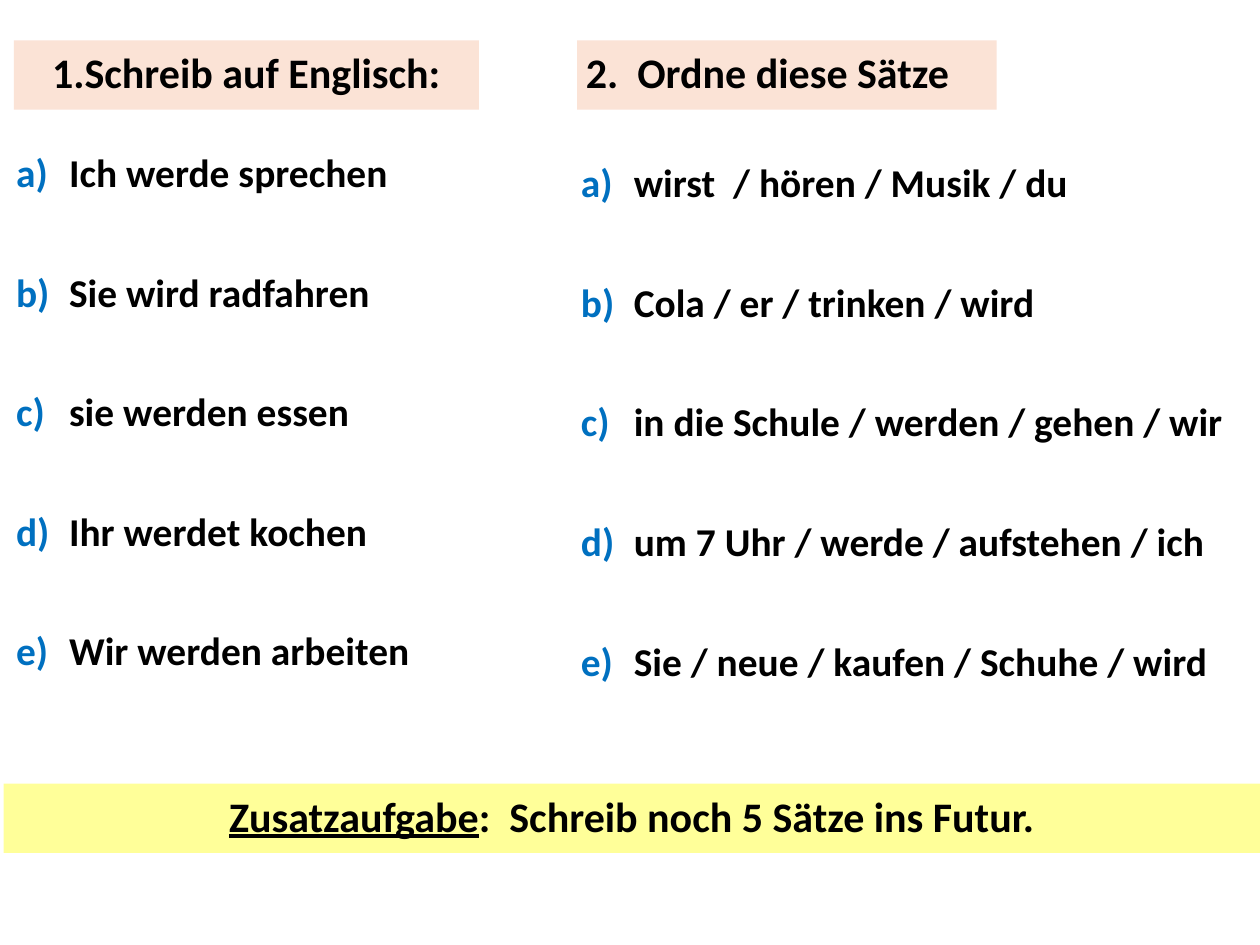
from pptx import Presentation
from pptx.dml.color import RGBColor
from pptx.enum.shapes import MSO_SHAPE
from pptx.enum.text import MSO_ANCHOR, PP_ALIGN
from pptx.oxml.ns import qn
from pptx.util import Inches, Pt
from lxml.etree import SubElement

COLORS = {"text": "000000", "number": "0070C0", "heading": "FBE3D6", "bonus": "FFFF99"}


class Worksheet:
    font = "Calibri"
    banner_size = 24
    item_size = 22.5
    line_spacing = 0.9
    item_gap = 44
    indent = 0.42

    def __init__(self, slide):
        self.slide = slide

    def set_frame(self, shape, side, edge, anchor):
        frame = shape.text_frame
        frame.word_wrap = True
        frame.vertical_anchor = anchor
        frame.margin_left = frame.margin_right = Inches(side)
        frame.margin_top = frame.margin_bottom = Inches(edge)
        return frame

    def add_span(self, para, text, size, underline=False):
        span = para.add_run()
        span.text = text
        span.font.name = self.font
        span.font.size = Pt(size)
        span.font.bold = True
        span.font.underline = underline
        span.font.color.rgb = RGBColor.from_string(COLORS["text"])

    def add_banner(self, left, top, width, fill, spans, align=PP_ALIGN.CENTER):
        banner = self.slide.shapes.add_shape(
            MSO_SHAPE.RECTANGLE, Inches(left), Inches(top), Inches(width), Inches(0.55))
        banner.shadow.inherit = False
        banner.fill.solid()
        banner.fill.fore_color.rgb = RGBColor.from_string(COLORS[fill])
        banner.line.fill.background()
        para = self.set_frame(banner, 0.07, 0.04, MSO_ANCHOR.MIDDLE).paragraphs[0]
        para.alignment = align
        para.line_spacing = self.line_spacing
        for text, underline in spans:
            self.add_span(para, text, self.banner_size, underline)

    def number_para(self, para):
        props = para._p.get_or_add_pPr()
        props.set("marL", str(Inches(self.indent)))
        props.set("indent", str(-Inches(self.indent)))
        color = SubElement(props, qn("a:buClr"))
        SubElement(color, qn("a:srgbClr")).set("val", COLORS["number"])
        SubElement(props, qn("a:buFont")).set("typeface", "+mj-lt")
        SubElement(props, qn("a:buAutoNum")).set("type", "alphaLcParenR")

    def add_list(self, left, top, width, side, edge, items):
        box = self.slide.shapes.add_textbox(
            Inches(left), Inches(top), Inches(width), Inches(4.75))
        frame = self.set_frame(box, side, edge, MSO_ANCHOR.TOP)
        for index, item in enumerate(items):
            para = frame.add_paragraph() if index else frame.paragraphs[0]
            para.line_spacing = self.line_spacing
            para.space_before = Pt(self.item_gap if index else 0)
            self.number_para(para)
            self.add_span(para, item, self.item_size)


def main():
    deck = Presentation()
    deck.slide_width, deck.slide_height = Inches(10), Inches(7.5)
    page = Worksheet(deck.slides.add_slide(deck.slide_layouts[6]))
    page.add_list(0.03, 1.17, 4.16, 0.1, 0.05, [
        "Ich werde sprechen",
        "Sie wird radfahren",
        "sie werden essen",
        "Ihr werdet kochen",
        "Wir werden arbeiten",
    ])
    page.add_banner(4.58, 0.32, 3.33, "heading",
                    [("2.  Ordne diese Sätze", False)], PP_ALIGN.LEFT)
    page.add_list(4.54, 1.26, 5.42, 0.07, 0.04, [
        "wirst  / hören / Musik / du",
        "Cola / er / trinken / wird",
        "in die Schule / werden / gehen / wir",
        "um 7 Uhr / werde / aufstehen / ich",
        "Sie / neue / kaufen / Schuhe / wird",
    ])
    page.add_banner(0.03, 6.22, 9.97, "bonus", [
        ("Zusatzaufgabe", True),
        (":  Schreib noch 5 Sätze ins Futur.", False),
    ])
    page.add_banner(0.11, 0.32, 3.69, "heading", [("1.Schreib auf Englisch:", False)])
    deck.save("out.pptx")


if __name__ == "__main__":
    main()
